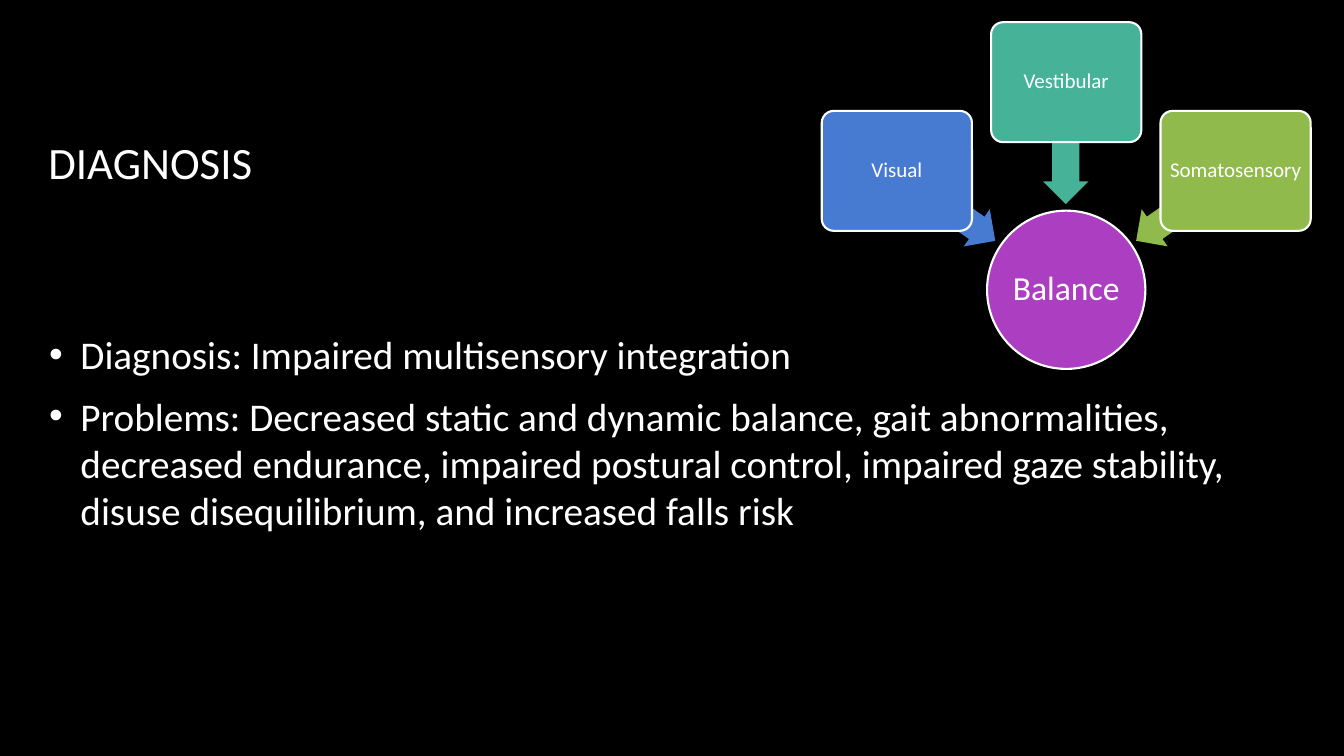
"""Build the diagnosis slide with its balance diagram."""
from pptx import Presentation
from pptx.dml.color import RGBColor
from pptx.enum.shapes import MSO_SHAPE
from pptx.enum.text import MSO_ANCHOR, MSO_AUTO_SIZE, PP_ALIGN
from pptx.oxml import parse_xml
from pptx.oxml.ns import nsdecls
from pptx.util import Inches, Pt

COLORS = {"black": "000000", "white": "FFFFFF", "purple": "AC3EC1",
          "blue": "477BD1", "teal": "46B298", "green": "90BA4C"}


def write(para, text, size):
    run = para.add_run()
    run.text = text
    run.font.size = Pt(size)
    run.font.name = "Calibri"
    run.font.color.rgb = RGBColor.from_string(COLORS["white"])


def draw(kind, box, color, text="", size=15, inset=0.03):
    shape = slide.shapes.add_shape(kind, *map(Inches, box))
    shape.shadow.inherit = False
    shape.fill.solid()
    shape.fill.fore_color.rgb = RGBColor.from_string(COLORS[color])
    if not text:
        shape.line.fill.background()
        return shape
    shape.line.color.rgb = RGBColor.from_string(COLORS["white"])
    shape.line.width = Pt(1.5)
    frame = shape.text_frame
    frame.word_wrap = True
    frame.vertical_anchor = MSO_ANCHOR.MIDDLE
    frame.margin_left = frame.margin_right = Inches(inset)
    frame.margin_top = frame.margin_bottom = Inches(inset)
    para = frame.paragraphs[0]
    para.alignment = PP_ALIGN.CENTER
    para.line_spacing = 0.9
    write(para, text, size)
    return shape


deck = Presentation()
deck.slide_width, deck.slide_height = Inches(13.33), Inches(7.5)
slide = deck.slides.add_slide(deck.slide_layouts[5])
slide.background.fill.solid()
slide.background.fill.fore_color.rgb = RGBColor.from_string(COLORS["black"])

title = slide.shapes.title
title.left, title.top = Inches(0.38), Inches(0.81)
title.width, title.height = Inches(8.5), Inches(1.59)
title.text_frame.auto_size = MSO_AUTO_SIZE.NONE
title.text_frame.vertical_anchor = MSO_ANCHOR.MIDDLE
head = title.text_frame.paragraphs[0]
head.alignment = PP_ALIGN.LEFT
write(head, "DIAGNOSIS", 32)

body = slide.shapes.add_textbox(
    Inches(0.39), Inches(2.31), Inches(12.57), Inches(3.95)).text_frame
body.word_wrap = True
body.vertical_anchor = MSO_ANCHOR.MIDDLE
points = [
    "Diagnosis: Impaired multisensory integration",
    "Problems: Decreased static and dynamic balance, gait abnormalities, "
    "decreased endurance, impaired postural control, impaired gaze stability, "
    "disuse disequilibrium, and increased falls risk",
]
for index, point in enumerate(points):
    para = body.add_paragraph() if index else body.paragraphs[0]
    props = para._p.get_or_add_pPr()
    props.set("marL", str(Inches(0.31)))
    props.set("indent", str(-Inches(0.31)))
    ns = nsdecls("a")
    props.append(parse_xml(
        f'<a:buClr {ns}><a:srgbClr val="{COLORS["white"]}"/></a:buClr>'))
    props.append(parse_xml(f'<a:buFont {ns} typeface="Arial"/>'))
    props.append(parse_xml(f'<a:buChar {ns} char="•"/>'))
    para.space_after = Pt(10)
    write(para, point, 28)

draw(MSO_SHAPE.OVAL, (9.79, 2.09, 1.57, 1.57), "purple", "Balance", 24, 0.02)

senses = [
    ("Visual", "blue", 8.15, 1.1, 8.78, 1.82, 215),
    ("Vestibular", "teal", 9.83, 0.22, 9.97, 1.2, 270),
    ("Somatosensory", "green", 11.51, 1.1, 11.16, 1.82, 325),
]
for name, color, left, top, tail, level, angle in senses:
    arrow = draw(MSO_SHAPE.LEFT_ARROW, (tail, level, 1.2, 0.45), color)
    arrow.adjustments[0] = 0.6
    arrow.adjustments[1] = 0.5
    arrow.rotation = angle
    card = draw(MSO_SHAPE.ROUNDED_RECTANGLE, (left, top, 1.49, 1.19), color, name)
    card.adjustments[0] = 0.1

deck.save("out.pptx")
